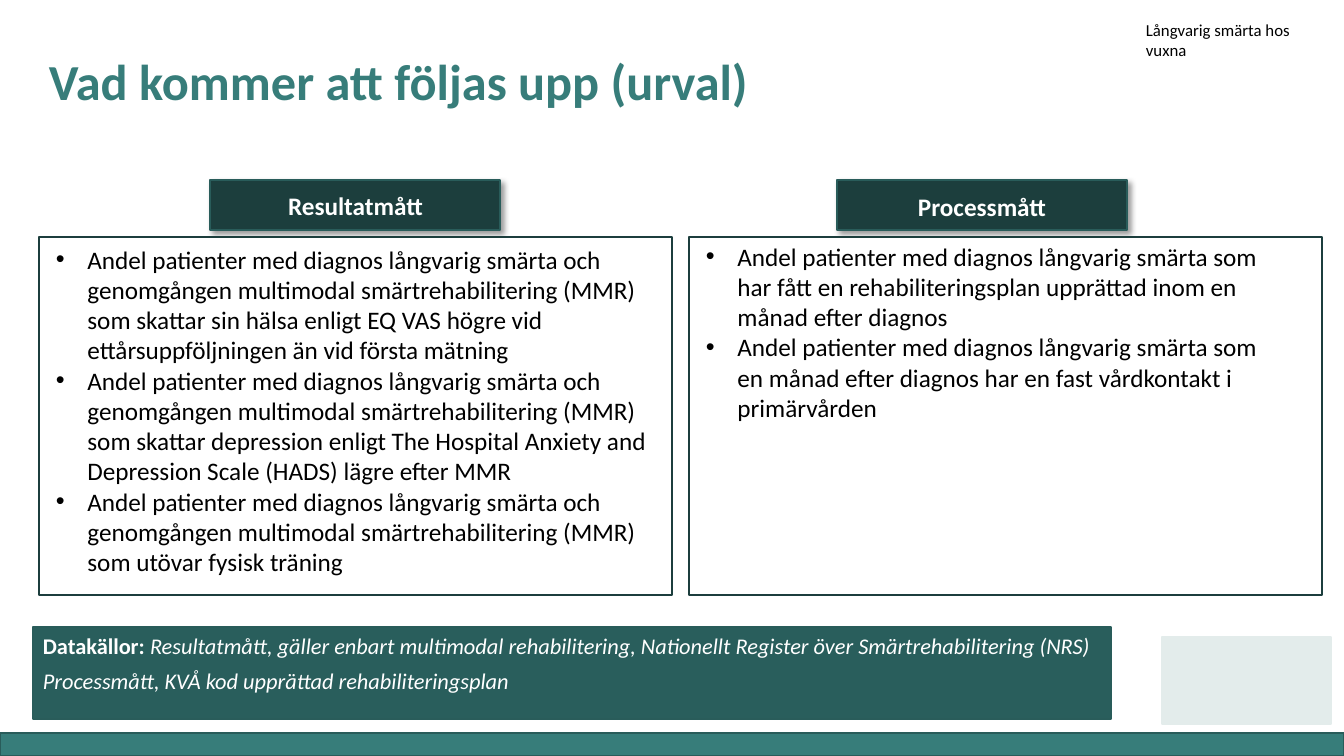
from lxml import etree
from pptx import Presentation, util as u
from pptx.dml.color import RGBColor
from pptx.enum import shapes, text
from pptx.oxml import parse_xml
from pptx.oxml.ns import nsdecls, qn

PX = 914400 / 100.8
COLORS = {"teal": "377D7A", "deep": "295E5C", "edge": "295C5A", "dark": "1C3E3D",
          "white": "FFFFFF", "black": "000000", "pale": "E3ECEB"}
ANCHORS = text.MSO_ANCHOR


def add_box(at, fill, line):
    box = page.shapes.add_shape(shapes.MSO_SHAPE.RECTANGLE, *[u.Emu(round(n * PX)) for n in at])
    box.shadow.inherit = False
    box.fill.solid()
    box.fill.fore_color.rgb = RGBColor.from_string(COLORS[fill])
    box.line.color.rgb = RGBColor.from_string(COLORS[line])
    box.line.width = u.Pt(1)
    return box


def write(paragraphs, size, color="black", at=None, box=None, anchor=ANCHORS.TOP,
          bullets=False, para_format=None, **font):
    """Fill a box, or a new text box at `at`; a paragraph is a list of (text, font values)."""
    if box is None:
        box = page.shapes.add_textbox(*[u.Emu(round(n * PX)) for n in at])
    frame = box.text_frame
    frame.word_wrap = True
    frame.vertical_anchor = anchor
    for index, spans in enumerate(paragraphs):
        para = frame.add_paragraph() if index else frame.paragraphs[0]
        para.alignment = text.PP_ALIGN.LEFT
        for name, value in (para_format or {}).items():
            if index or name != "space_before":
                setattr(para, name, value)
        if bullets:
            props = para._p.get_or_add_pPr()
            props.set("marL", str(u.Pt(22.5)))
            props.set("indent", str(-u.Pt(22.5)))
            etree.SubElement(props, qn("a:buFont")).set("typeface", "Arial")
            etree.SubElement(props, qn("a:buChar")).set("char", "•")
        for words, values in spans:
            span = para.add_run()
            span.text = words
            span.font.color.rgb = RGBColor.from_string(COLORS[color])
            for name, value in {"name": "Calibri", "size": u.Pt(size), **font, **values}.items():
                setattr(span.font, name, value)


deck = Presentation()
deck.slide_width, deck.slide_height = u.Emu(round(1344 * PX)), u.Emu(round(756 * PX))
page = deck.slides.add_slide(deck.slide_layouts[6])

# Footer band and plain sender block
add_box((0, 733, 1344, 23), "teal", "edge")
add_box((1162, 637, 169, 87), "pale", "pale")

# Heading and topic
write([[("Vad kommer att följas upp (urval)", {})]], 36, "teal", at=(39, 49, 1008, 67),
      anchor=ANCHORS.BOTTOM, bold=True, para_format={"line_spacing": 0.9})
write([[("Långvarig smärta hos vuxna", {})]], 12, at=(1136, 15, 171, 50))

# Measure columns: heading, panel left, tag left, label place, list place, bullets
patients = "Andel patienter med diagnos långvarig smärta "
rehab = patients + "och genomgången multimodal smärtrehabilitering (MMR) som "
columns = [
    ("Resultatmått", 39, 210, (39, 178, 633, 55), (46, 239, 626, 346), [
        rehab + "skattar sin hälsa enligt EQ VAS högre vid ettårsuppföljningen än vid första mätning",
        rehab + "skattar depression enligt The Hospital Anxiety and Depression Scale (HADS) "
                "lägre efter MMR",
        rehab + "utövar fysisk träning"]),
    ("Processmått", 689, 837, (682, 173, 600, 66), (696, 236, 597, 194), [
        patients + "som har fått en rehabiliteringsplan upprättad inom en månad efter diagnos",
        patients + "som en månad efter diagnos har en fast vårdkontakt i primärvården"]),
]
for heading, panel_left, tag_left, label_at, list_at, measures in columns:
    tag = add_box((tag_left, 180, 290, 50), "dark", "edge")
    effects = tag._element.spPr.find(qn("a:effectLst"))
    effects.append(parse_xml(
        f'<a:outerShdw {nsdecls("a")} blurRad="50800" dist="38100" dir="2700000" algn="tl" '
        f'rotWithShape="0"><a:srgbClr val="{COLORS["black"]}"><a:alpha val="40000"/>'
        '</a:srgbClr></a:outerShdw>'))
    write([[(heading, {})]], 18, "white", at=label_at, anchor=ANCHORS.MIDDLE, bold=True,
          para_format={"alignment": text.PP_ALIGN.CENTER})
    add_box((panel_left, 237, 633, 358), "white", "dark")
    write([[(measure, {})] for measure in measures], 18, at=list_at, bullets=True)

# Data sources
sources = add_box((33, 627, 1078, 92), "deep", "edge")
write([
    [("Datakällor: ", {"bold": True}),
     ("Resultatmått, gäller enbart multimodal rehabilitering, "
      "Nationellt Register över Smärtrehabilitering (NRS)", {"italic": True})],
    [("Processmått, KVÅ kod upprättad rehabiliteringsplan", {"italic": True})],
], 16, "white", box=sources, para_format={"space_before": u.Pt(6)})

deck.save("out.pptx")
